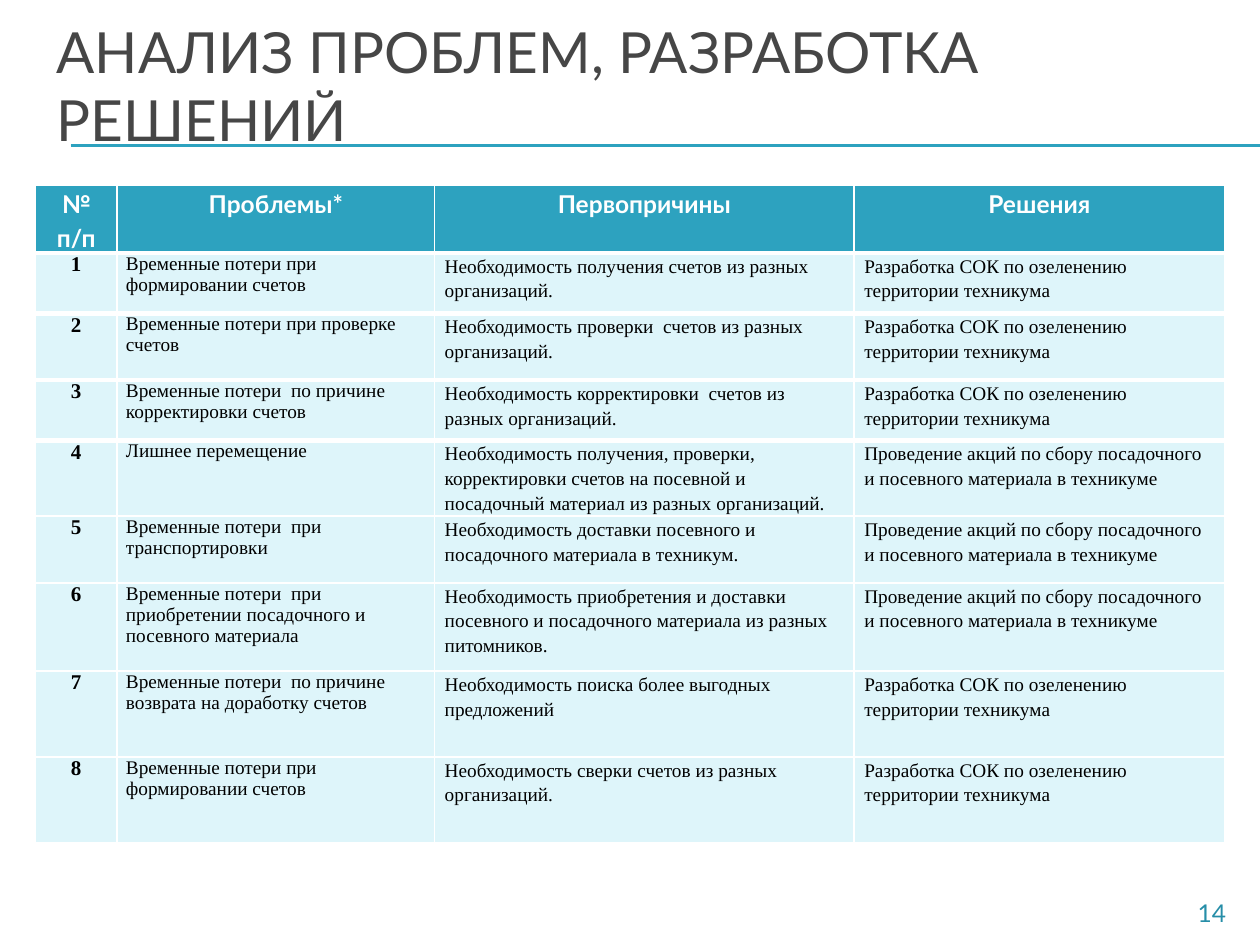
from lxml.etree import SubElement
from pptx import Presentation
from pptx.dml.color import RGBColor
from pptx.enum.shapes import MSO_CONNECTOR
from pptx.enum.text import MSO_ANCHOR, MSO_AUTO_SIZE, PP_ALIGN
from pptx.oxml import parse_xml
from pptx.oxml.ns import nsdecls, qn
from pptx.util import Inches, Pt

COLORS = {
    "title": "464646",
    "accent": "2DA2BF",
    "number": "268EA8",
    "row": "DEF5FA",
    "text": "000000",
    "white": "FFFFFF",
}

presentation = Presentation()
presentation.slide_width = Inches(10)
presentation.slide_height = Inches(7.5)

# The slide is a grid of 100 columns by 75 rows of square units
UNIT = presentation.slide_width / 100


def grid(*units):
    return [round(unit * UNIT) for unit in units]


def format_paragraph(paragraph, size, font, color, bold=False,
                     alignment=PP_ALIGN.LEFT, spacing=1.0):
    paragraph.alignment = alignment
    paragraph.line_spacing = spacing
    for run in paragraph.runs:
        run.font.size = Pt(size)
        run.font.name = font
        run.font.bold = bold
        run.font.color.rgb = RGBColor.from_string(COLORS[color])


slide = presentation.slides.add_slide(presentation.slide_layouts[5])

# Double rule under the title
for rule_row in (11.5, 11.6):
    rule = slide.shapes.add_connector(
        MSO_CONNECTOR.STRAIGHT, *grid(5.6, rule_row, 100, rule_row))
    rule.line.color.rgb = RGBColor.from_string(COLORS["accent"])
    rule.line.width = Pt(0.75)
    SubElement(rule._element.spPr, qn("a:effectLst"))

# Title
title = slide.shapes.title
title.left, title.top, title.width, title.height = grid(3.5, 2.1, 95, 9.2)
title.text_frame.text = "АНАЛИЗ ПРОБЛЕМ, РАЗРАБОТКА РЕШЕНИЙ"
title.text_frame.word_wrap = True
title.text_frame.auto_size = MSO_AUTO_SIZE.NONE
title.text_frame.vertical_anchor = MSO_ANCHOR.MIDDLE
format_paragraph(title.text_frame.paragraphs[0], 32.4, "Lato", "title")

# Table content: problem, root cause, solution
PROCEDURE = "Разработка СОК по озеленению территории техникума"
COLLECTION = ("Проведение акций по сбору посадочного и посевного материала "
              "в техникуме")
header = ("№ п/п", "Проблемы*", "Первопричины", "Решения")
problems = [
    ("Временные потери при формировании счетов",
     "Необходимость получения счетов из разных организаций.", PROCEDURE),
    ("Временные потери при проверке счетов",
     "Необходимость проверки  счетов из разных организаций.", PROCEDURE),
    ("Временные потери  по причине корректировки счетов",
     "Необходимость корректировки  счетов из разных организаций.", PROCEDURE),
    ("Лишнее перемещение",
     "Необходимость получения, проверки,  корректировки счетов на посевной "
     "и посадочный материал из разных организаций.", COLLECTION),
    ("Временные потери  при транспортировки",
     "Необходимость доставки посевного и посадочного материала в техникум.",
     COLLECTION),
    ("Временные потери  при приобретении посадочного и посевного материала",
     "Необходимость приобретения и доставки посевного и посадочного "
     "материала из разных питомников.", COLLECTION),
    ("Временные потери  по причине возврата на доработку счетов",
     "Необходимость поиска более выгодных предложений", PROCEDURE),
    ("Временные потери при формировании счетов",
     "Необходимость сверки счетов из разных организаций.", PROCEDURE),
]
rows = [header] + [(str(number), *problem)
                   for number, problem in enumerate(problems, 1)]
column_widths = grid(6.5, 25.2, 33.3, 29.4)
row_heights = grid(5.2, 4.8, 5.3, 4.8, 6, 5.3, 7, 6.8, 6.8)
THICK_RULES = 4  # the header and the first three rows end in a thick rule

table = slide.shapes.add_table(
    len(rows), len(header), *grid(2.8, 14.7),
    sum(column_widths), sum(row_heights)).table
for column, width in zip(table.columns, column_widths):
    column.width = width
for row, height in zip(table.rows, row_heights):
    row.height = height

for row_index, row in enumerate(rows):
    is_header = row_index == 0
    borders = {
        "lnL": 1,
        "lnR": 1,
        "lnT": 3 if 0 < row_index <= THICK_RULES else 1,
        "lnB": 3 if row_index < THICK_RULES else 1,
    }
    for column_index, text in enumerate(row):
        cell = table.cell(row_index, column_index)
        is_problem = column_index == 1 and not is_header
        cell.margin_left = cell.margin_right = Inches(0.07 if is_problem else 0.08)
        cell.margin_top = cell.margin_bottom = 0

        # Borders come before the fill in the cell properties
        properties = cell._tc.get_or_add_tcPr()
        for side, width in borders.items():
            properties.append(parse_xml(
                f'<a:{side} {nsdecls("a")} w="{Pt(width)}"><a:solidFill>'
                f'<a:srgbClr val="{COLORS["white"]}"/></a:solidFill></a:{side}>'))
        cell.fill.solid()
        cell.fill.fore_color.rgb = RGBColor.from_string(
            COLORS["accent" if is_header else "row"])

        cell.text_frame.text = text
        paragraph = cell.text_frame.paragraphs[0]
        if is_header:
            format_paragraph(paragraph, 14, "Lato", "white", True,
                             PP_ALIGN.CENTER, 1.15)
        elif column_index == 0:
            format_paragraph(paragraph, 12, "Times New Roman", "text", True,
                             PP_ALIGN.CENTER)
        else:
            format_paragraph(paragraph, 11, "Times New Roman", "text",
                             spacing=1.0 if is_problem else 1.15)

# Slide number
number_box = slide.shapes.add_textbox(*grid(5.1, 70.8, 93.2, 2.7))
number_box.text_frame.word_wrap = True
number_box.text_frame.text = "14"
format_paragraph(number_box.text_frame.paragraphs[0], 14, "Lato", "number",
                 alignment=PP_ALIGN.RIGHT)

presentation.save("out.pptx")
